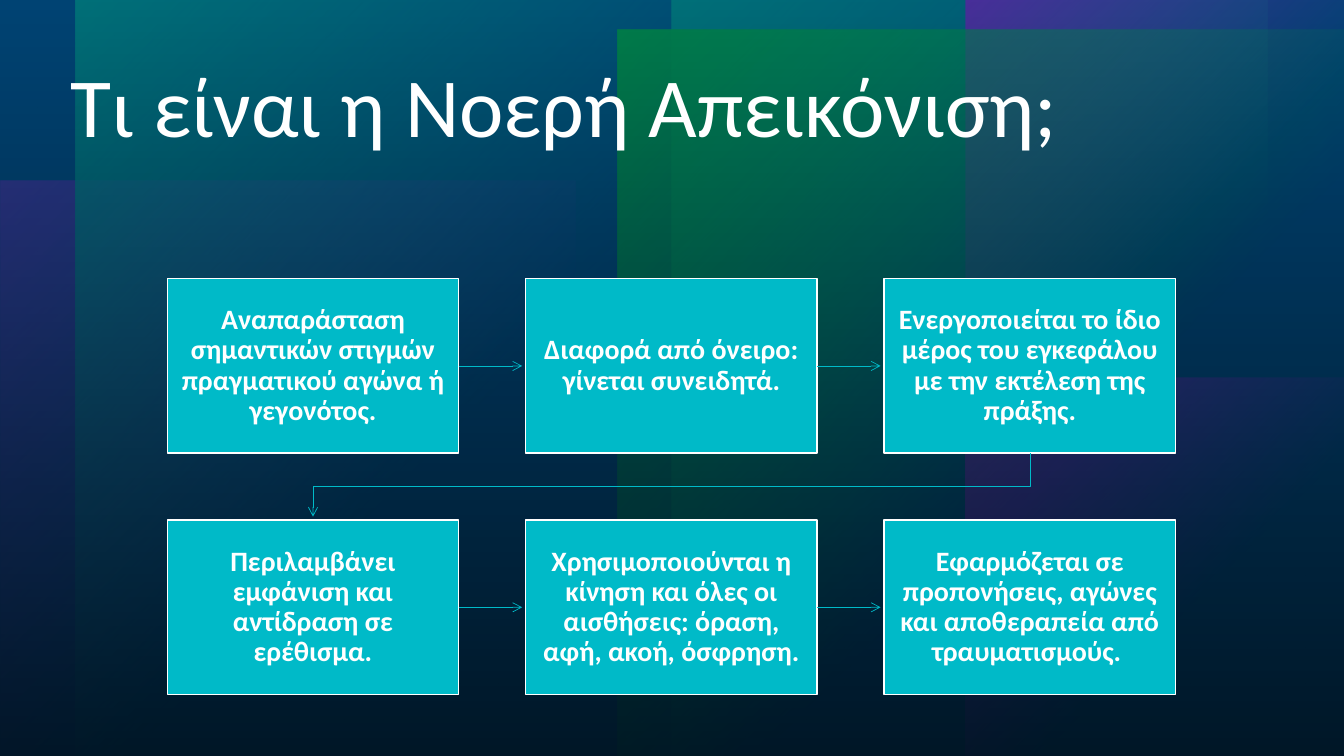
from lxml import etree
from pptx import Presentation
from pptx import util as u
from pptx.dml.color import RGBColor
from pptx.enum import shapes, text
from pptx.oxml import ns

COLORS = {"base": "0070C0", "teal": "00BAC8", "violet": "794DFF",
          "green": "00D17D", "shade": "000000", "white": "FFFFFF"}
FONT = "Calibri"

# Columns and rows are hundredths of the slide's width and height.
CARD_LEFT, CARD_TOP = 12.45, 36.87
CARD_WIDTH, CARD_HEIGHT = 21.68, 23.07
COLUMN_STEP, ROW_STEP = 26.67, 31.93
ARROW_LENGTH = 4.72
TURN_DROP, TURN_END = 4.4, 8.4

# color, opacity, (left, top, width, height), rotation, mirrored
GLOWS = [
    ("violet", 60, (0, 23.87, 42.84, 76.13), 270, False),
    ("teal", 100, (49.97, 0, 44.34, 100), 0, False),
    ("teal", 100, (5.63, 0, 44.34, 100), 0, True),
    ("violet", 100, (71.87, 50, 28.13, 50), 90, False),
    ("violet", 100, (71.87, 0, 28.13, 50), 90, True),
    ("green", 100, (45.95, 3.9, 54.05, 96.1), 180, False),
]

STATEMENTS = [
    ["Αναπαράσταση σημαντικών στιγμών πραγματικού αγώνα ή γεγονότος.",
     "Διαφορά από όνειρο: γίνεται συνειδητά.",
     "Ενεργοποιείται το ίδιο μέρος του εγκεφάλου με την εκτέλεση της πράξης."],
    ["Περιλαμβάνει εμφάνιση και αντίδραση σε ερέθισμα.",
     "Χρησιμοποιούνται η κίνηση και όλες οι αισθήσεις: όραση, αφή, ακοή, όσφρηση.",
     "Εφαρμόζεται σε προπονήσεις, αγώνες και αποθεραπεία από τραυματισμούς. "],
]


def rgb(name):
    return RGBColor.from_string(COLORS[name])


class Deck:
    def __init__(self):
        self.prs = Presentation()
        self.prs.slide_width, self.prs.slide_height = u.Inches(13.33), u.Inches(7.5)
        self.slide = self.prs.slides.add_slide(self.prs.slide_layouts[5])
        fill = self.slide.background.fill
        fill.solid()
        fill.fore_color.rgb = rgb("base")

    def x(self, columns):
        return round(self.prs.slide_width * columns / 100)

    def y(self, rows):
        return round(self.prs.slide_height * rows / 100)

    def box(self, left, top, width, height):
        return self.x(left), self.y(top), self.x(width), self.y(height)

    def format(self, frame, size, bold=False):
        paragraph = frame.paragraphs[0]
        paragraph.line_spacing = 0.9
        font = paragraph.runs[0].font
        font.name, font.size, font.bold = FONT, u.Pt(size), bold
        font.color.rgb = rgb("white")
        return paragraph

    def panel(self, area):
        panel = self.slide.shapes.add_shape(shapes.MSO_SHAPE.RECTANGLE, *self.box(*area))
        panel.shadow.inherit = False
        return panel

    def gradient(self, area, color, stops, direction):
        """Draw a borderless panel of one color whose opacity varies."""
        panel = self.panel(area)
        stop_xml = "".join(
            f'<a:gs pos="{place * 1000}"><a:srgbClr val="{COLORS[color]}">'
            f'<a:alpha val="{opacity * 1000}"/></a:srgbClr></a:gs>'
            for place, opacity in stops)
        grad = etree.fromstring(
            f'<a:gradFill {ns.nsdecls("a")} rotWithShape="1">'
            f'<a:gsLst>{stop_xml}</a:gsLst>{direction}</a:gradFill>')
        panel.element.spPr.find(ns.qn("a:prstGeom")).addnext(grad)
        panel.line.fill.background()
        return panel

    def glow(self, color, opacity, area, rotation, mirrored):
        corner = ('<a:path path="circle"><a:fillToRect l="0" t="0" '
                  'r="100000" b="100000"/></a:path>')
        glow = self.gradient(area, color, [(0, opacity), (60, 0)], corner)
        glow.rotation = rotation
        if mirrored:
            glow.element.spPr.find(ns.qn("a:xfrm")).set("flipH", "1")

    def shade(self):
        self.gradient((0, 0, 100, 100), "shade", [(0, 40), (100, 80)],
                      '<a:lin ang="5400000" scaled="0"/>')

    def title(self, words):
        title = self.slide.shapes.title
        title.left, title.top, title.width, title.height = self.box(4.5, 7.87, 90.85, 26.4)
        frame = title.text_frame
        frame.text = words
        frame.auto_size = text.MSO_AUTO_SIZE.NONE
        frame.vertical_anchor = text.MSO_ANCHOR.TOP
        self.format(frame, 60).alignment = text.PP_ALIGN.LEFT
        title.element.getparent().append(title.element)  # in front of the backdrop

    def card(self, left, top, words):
        card = self.panel((left, top, CARD_WIDTH, CARD_HEIGHT))
        card.fill.solid()
        card.fill.fore_color.rgb = rgb("teal")
        card.line.color.rgb = rgb("white")
        card.line.width = u.Pt(1)
        frame = card.text_frame
        frame.text = words
        frame.word_wrap = True
        frame.vertical_anchor = text.MSO_ANCHOR.MIDDLE
        frame.margin_left = frame.margin_right = u.Inches(0.14)
        frame.margin_top = frame.margin_bottom = u.Inches(0.15)
        self.format(frame, 20, bold=True).alignment = text.PP_ALIGN.CENTER

    def arrowhead(self, line):
        line.color.rgb = rgb("teal")
        line.width = u.Pt(0.5)
        etree.SubElement(line._get_or_add_ln(), ns.qn("a:tailEnd"), type="arrow")

    def arrow(self, left, top):
        arrow = self.slide.shapes.add_connector(
            shapes.MSO_CONNECTOR.STRAIGHT, self.x(left), self.y(top),
            self.x(left + ARROW_LENGTH), self.y(top))
        self.arrowhead(arrow.line)
        etree.SubElement(arrow.element.spPr, ns.qn("a:effectLst"))

    def bent_arrow(self, corners):
        start, *rest = [(self.x(left), self.y(top)) for left, top in corners]
        builder = self.slide.shapes.build_freeform(*start)
        builder.add_line_segments(rest, close=False)
        bend = builder.convert_to_shape()
        bend.fill.background()
        bend.shadow.inherit = False
        self.arrowhead(bend.line)


def main():
    deck = Deck()
    for glow in GLOWS:
        deck.glow(*glow)
    deck.shade()
    deck.title("Τι είναι η Νοερή Απεικόνιση;")

    for row, statements in enumerate(STATEMENTS):
        top = CARD_TOP + row * ROW_STEP
        for column, statement in enumerate(statements):
            left = CARD_LEFT + column * COLUMN_STEP
            deck.card(left, top, statement)
            if column < len(statements) - 1:
                deck.arrow(left + CARD_WIDTH, top + CARD_HEIGHT / 2)

    first = CARD_LEFT + CARD_WIDTH / 2
    last = first + 2 * COLUMN_STEP
    bottom = CARD_TOP + CARD_HEIGHT
    deck.bent_arrow([(last, bottom), (last, bottom + TURN_DROP),
                     (first, bottom + TURN_DROP), (first, bottom + TURN_END)])
    deck.prs.save("out.pptx")


if __name__ == "__main__":
    main()
